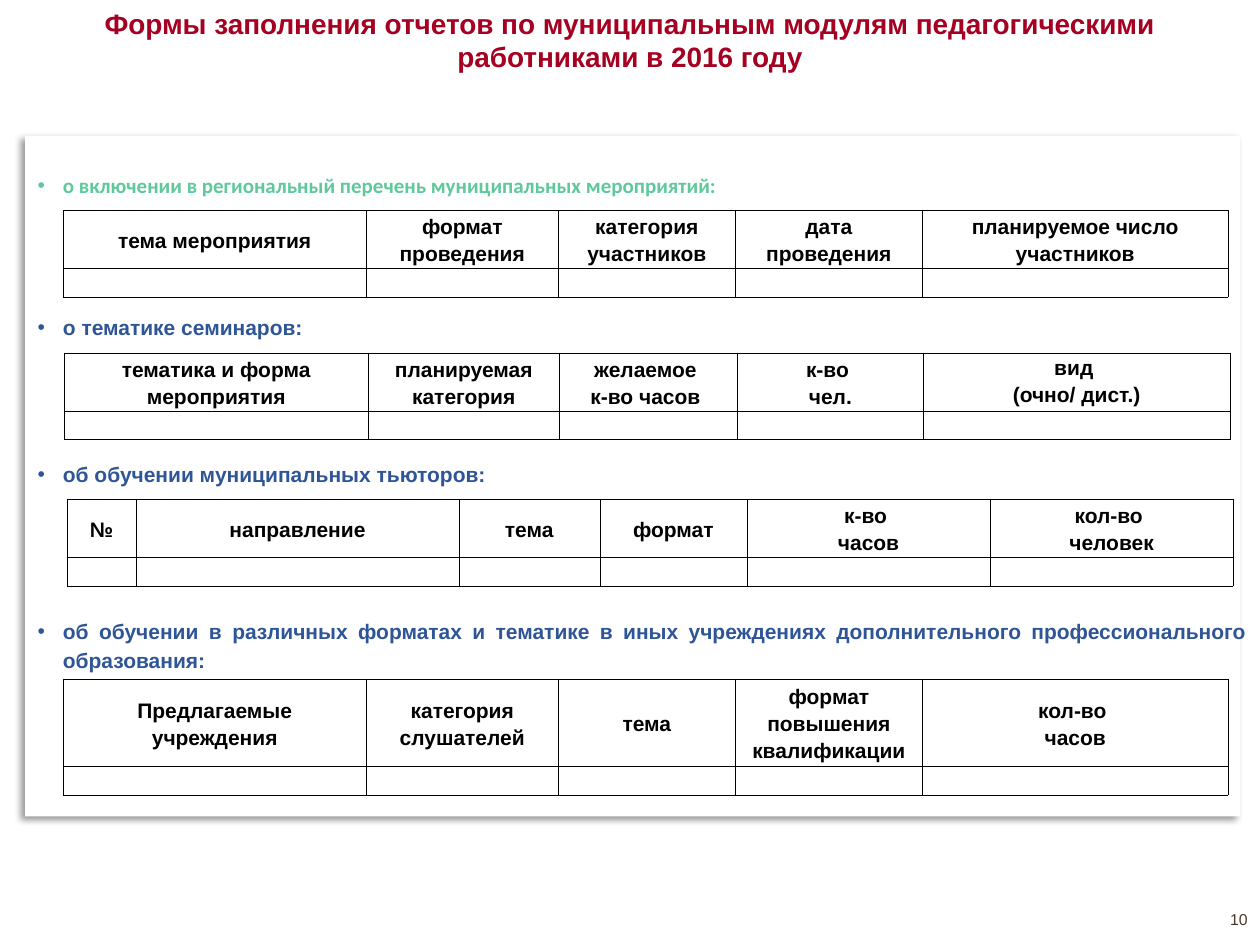
from lxml import etree
from pptx import Presentation
from pptx.dml.color import RGBColor
from pptx.enum.shapes import MSO_SHAPE
from pptx.enum.text import MSO_ANCHOR, PP_ALIGN
from pptx.oxml.ns import qn
from pptx.util import Cm, Pt

RECT = MSO_SHAPE.RECTANGLE
TOP, MIDDLE = MSO_ANCHOR.TOP, MSO_ANCHOR.MIDDLE
CENTER, RIGHT, JUSTIFY = PP_ALIGN.CENTER, PP_ALIGN.RIGHT, PP_ALIGN.JUSTIFY
RED = RGBColor(0xA5, 0x00, 0x21)
GREEN = RGBColor(0x60, 0xC9, 0x9C)
BLUE = RGBColor(0x2F, 0x55, 0x97)
BROWN = RGBColor(0x4A, 0x38, 0x2D)
BLACK = RGBColor(0x00, 0x00, 0x00)
WHITE = RGBColor(0xFF, 0xFF, 0xFF)

LEFT = 0.51
WIDE = [6.12, 3.86, 3.58, 3.76, 6.17]
SPLIT = [1.4, 6.5, 2.84, 2.97, 4.9, 4.9]
FORMS = [
    dict(title="о включении в региональный перечень муниципальных мероприятий:",
         box=(LEFT, 3.28, 22.23, 0.84), left=1.27, color=GREEN, face="Calibri",
         heads=["тема мероприятия", "формат проведения", "категория участников",
                "дата проведения", "планируемое число участников"]),
    dict(title="о тематике семинаров:",
         box=(LEFT, 6.15, 22.23, 0.84), left=1.3, last=TOP,
         heads=["тематика и форма мероприятия", "планируемая категория",
                "желаемое \nк-во часов ", "к-во \nчел.", "вид \n(очно/ дист.)"]),
    dict(title="об обучении муниципальных тьюторов:",
         box=(LEFT, 9.1, 22.23, 0.84), left=1.35, cols=SPLIT,
         heads=["№", "направление", "тема", "формат", "к-во \nчасов",
                "кол-во \nчеловек"]),
    dict(title="об обучении в различных форматах и тематике в иных учреждениях "
               "дополнительного профессионального образования:",
         box=(LEFT, 12.27, 24.89, 0.84), left=1.27, drop=1.42, lines=3,
         heads=["Предлагаемые учреждения", "категория слушателей", "тема",
                "формат повышения квалификации", "кол-во \nчасов"]),
]


def write(frame, text, size=12, color=BLACK, face="Arial", bold=True,
          align=CENTER, space=None, after=None, bullet=False):
    """Fill a text frame with one formatted paragraph."""
    frame.word_wrap = True
    para = frame.paragraphs[0]
    para.alignment = align
    if space:
        para.line_spacing = space
    if after:
        para.space_after = Pt(after)
    if bullet:
        props = para._p.get_or_add_pPr()
        props.set("marL", str(Cm(0.51)))
        props.set("indent", str(-Cm(0.51)))
        etree.SubElement(props, qn("a:buFont"), typeface="Arial")
        etree.SubElement(props, qn("a:buChar"), char="•")
    for i, line in enumerate(text.split("\n")):
        if i:
            para.add_line_break()
        run = para.add_run()
        run.text = line
        font = run.font
        font.size, font.bold, font.name = Pt(size), bold, face
        font.color.rgb = color


def label(slide, box, text, anchor=TOP, **style):
    """Place a text box."""
    frame = slide.shapes.add_textbox(*map(Cm, box)).text_frame
    frame.vertical_anchor = anchor
    write(frame, text, **style)


def panel(slide, box):
    """Place the white panel with its soft shadow."""
    shape = slide.shapes.add_shape(RECT, *map(Cm, box))
    shape.shadow.inherit = False
    shape.fill.solid()
    shape.fill.fore_color.rgb = WHITE
    shape.line.fill.background()
    effects = shape._element.spPr.find(qn("a:effectLst"))
    shadow = etree.SubElement(
        effects, qn("a:outerShdw"), blurRad=str(Pt(4)), dist=str(Pt(3)),
        dir=str(135 * 60000), algn="tr", rotWithShape="0")
    tint = etree.SubElement(shadow, qn("a:srgbClr"), val=str(BLACK))
    etree.SubElement(tint, qn("a:alpha"), val="40000")


def frame_cell(cell):
    """Clear a cell's fill and give it thin black borders."""
    cell.margin_left = cell.margin_right = Cm(0.18)
    cell.margin_top = cell.margin_bottom = 0
    props = cell._tc.get_or_add_tcPr()
    for side in ("lnL", "lnR", "lnT", "lnB"):
        edge = etree.SubElement(props, qn(f"a:{side}"), w=str(Pt(0.25)))
        fill = etree.SubElement(edge, qn("a:solidFill"))
        etree.SubElement(fill, qn("a:srgbClr"), val=str(BLACK))
    cell.fill.background()


def grid(slide, box, heads, cols, last):
    """Place a table with a head row and one blank row."""
    table = slide.shapes.add_table(2, len(cols), *map(Cm, box)).table
    table.first_row = table.horz_banding = False
    table.rows[1].height = Cm(0.58)
    table.rows[0].height = Cm(box[3] - 0.58)
    for i, (head, width) in enumerate(zip(heads, cols)):
        table.columns[i].width = Cm(width)
        top, blank = table.cell(0, i), table.cell(1, i)
        frame_cell(top)
        frame_cell(blank)
        top.vertical_anchor = MIDDLE if i < len(cols) - 1 else last
        write(top.text_frame, head, space=1.15, after=10)
        para = blank.text_frame.paragraphs[0]
        etree.SubElement(para._p, qn("a:endParaRPr"), sz="1200")


def form(slide, box, title, heads, left, cols=WIDE, drop=0.96, lines=2,
         last=MIDDLE, color=BLUE, face="Arial"):
    """Place a bulleted heading and the table below it."""
    label(slide, box, title, color=color, face=face, align=JUSTIFY,
          space=1.15, bullet=True)
    area = (left, box[1] + drop, sum(cols), 0.585 * lines + 0.58)
    grid(slide, area, heads, cols, last)


def main():
    """Build and save the slide."""
    deck = Presentation()
    deck.slide_width, deck.slide_height = Cm(25.4), Cm(19.05)
    slide = deck.slides.add_slide(deck.slide_layouts[6])
    panel(slide, (LEFT, 2.74, 24.49, 13.72))
    label(slide, (0, 0, 25.4, 1.63),
          "Формы заполнения отчетов по муниципальным модулям "
          "педагогическими работниками в 2016 году", size=16, color=RED)
    for item in FORMS:
        form(slide, **item)
    label(slide, (19.69, 18.03, 5.71, 1.02), "10", anchor=MIDDLE, size=9,
          color=BROWN, bold=False, align=RIGHT)
    deck.save("out.pptx")


if __name__ == "__main__":
    main()
